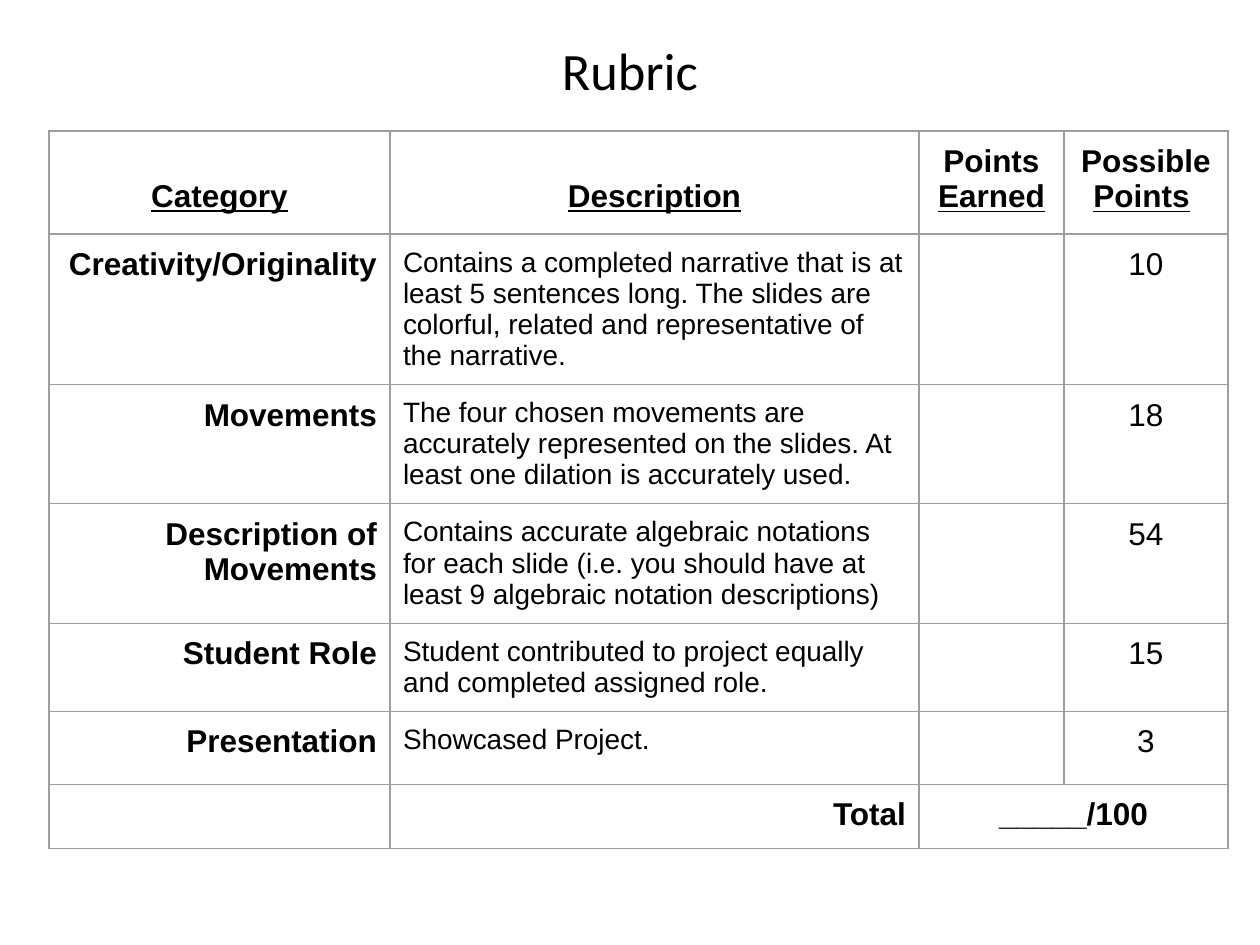
from lxml.etree import SubElement
from pptx import Presentation
from pptx.dml.color import RGBColor
from pptx.enum.text import MSO_ANCHOR, MSO_AUTO_SIZE, PP_ALIGN
from pptx.oxml.ns import qn
from pptx.util import Pt

EMU_PER_PX = 914400 / 126
MARGIN = 13
HEADER_LINE = 35
BLACK = "000000"
BORDER = "9E9E9E"
COLUMN_WIDTHS = [341, 529, 145, 164]
ROW_HEIGHTS = [103, 149, 119, 118, 87, 73, 62]
HEADERS = [
    [("Category", True)],
    [("Description", True)],
    [("Points ", False), ("Earned", True)],
    [("Possible ", False), ("Points", True), (" ", False)],
]
CRITERIA = [
    ("Creativity/Originality",
     "Contains a completed narrative that is at least 5 sentences long. "
     "The slides are colorful, related and representative of the narrative.", "10"),
    ("Movements",
     "The four chosen movements are accurately represented on the slides. "
     "At least one dilation is accurately used.", "18"),
    ("Description of Movements",
     "Contains accurate algebraic notations for each slide "
     "(i.e. you should have at least 9 algebraic notation descriptions)", "54"),
    ("Student Role",
     "Student contributed to project equally and completed assigned role.", "15"),
    ("Presentation", "Showcased Project.", "3"),
]


def px(length):
    """Turn pixels into EMU."""
    return round(length * EMU_PER_PX)


def color(hex_string):
    """Turn a hex string into a colour."""
    return RGBColor.from_string(hex_string)


def add_run(paragraph, text, size, font="Arial", bold=False, underline=False):
    """Add one formatted run to a paragraph."""
    run = paragraph.add_run()
    run.text = text
    run.font.name = font
    run.font.size = Pt(size)
    run.font.bold = bold
    run.font.underline = underline
    run.font.color.rgb = color(BLACK)


def set_margins(target):
    """Give a cell or text frame equal margins."""
    target.margin_left = target.margin_right = px(MARGIN)
    target.margin_top = target.margin_bottom = px(MARGIN)


def format_cell(cell):
    """Clear the fill of a cell and draw its four borders."""
    set_margins(cell)
    cell.vertical_anchor = MSO_ANCHOR.TOP
    properties = cell._tc.get_or_add_tcPr()
    for side in ("a:lnL", "a:lnR", "a:lnT", "a:lnB"):
        line = SubElement(properties, qn(side), w=str(Pt(0.75)))
        fill = SubElement(line, qn("a:solidFill"))
        SubElement(fill, qn("a:srgbClr"), val=BORDER)
    cell.fill.background()


def write_cell(cell, text, alignment, size=18, bold=False):
    """Write one run of text into a cell."""
    paragraph = cell.text_frame.paragraphs[0]
    paragraph.alignment = alignment
    add_run(paragraph, text, size, bold=bold)


def write_header(table):
    """Fill the header row, with single words on the second line."""
    for column, runs in enumerate(HEADERS):
        cell = table.cell(0, column)
        paragraph = cell.text_frame.paragraphs[0]
        paragraph.alignment = PP_ALIGN.CENTER
        for text, underline in runs:
            add_run(paragraph, text, 18, bold=True, underline=underline)
        if len(runs) == 1:
            cell.margin_top = px(MARGIN + HEADER_LINE)


def write_total(table):
    """Fill the total row and merge its point cells."""
    row = len(ROW_HEIGHTS) - 1
    table.cell(row, 2).merge(table.cell(row, 3))
    write_cell(table.cell(row, 1), "Total", PP_ALIGN.RIGHT, bold=True)
    write_cell(table.cell(row, 2), "_____/100", PP_ALIGN.CENTER, bold=True)


def add_rubric(slide, left, top):
    """Add the rubric table at the given corner."""
    frame = slide.shapes.add_table(
        len(ROW_HEIGHTS), len(COLUMN_WIDTHS), px(left), px(top),
        px(sum(COLUMN_WIDTHS)), px(sum(ROW_HEIGHTS)))
    table = frame.table
    table.first_row = table.horz_banding = False
    for column, width in zip(table.columns, COLUMN_WIDTHS):
        column.width = px(width)
    for row, height in zip(table.rows, ROW_HEIGHTS):
        row.height = px(height)
    for cell in table.iter_cells():
        format_cell(cell)
    write_header(table)
    for row, (category, description, points) in enumerate(CRITERIA, start=1):
        write_cell(table.cell(row, 0), category, PP_ALIGN.RIGHT, bold=True)
        write_cell(table.cell(row, 1), description, PP_ALIGN.LEFT, size=16)
        write_cell(table.cell(row, 3), points, PP_ALIGN.CENTER)
    write_total(table)


def add_title(slide, left, top, width, height):
    """Place and format the slide title."""
    title = slide.shapes.title
    title.left, title.top = px(left), px(top)
    title.width, title.height = px(width), px(height)
    frame = title.text_frame
    frame.auto_size = MSO_AUTO_SIZE.NONE
    frame.vertical_anchor = MSO_ANCHOR.MIDDLE
    set_margins(frame)
    paragraph = frame.paragraphs[0]
    paragraph.alignment = PP_ALIGN.CENTER
    add_run(paragraph, "Rubric", 30, font="Calibri")


def main():
    """Build and save the rubric slide."""
    presentation = Presentation()
    presentation.slide_width, presentation.slide_height = px(1260), px(945)
    slide = presentation.slides.add_slide(presentation.slide_layouts[5])
    add_title(slide, 63, 43, 1134, 53)
    add_rubric(slide, 49, 131)
    presentation.save("out.pptx")


if __name__ == "__main__":
    main()
